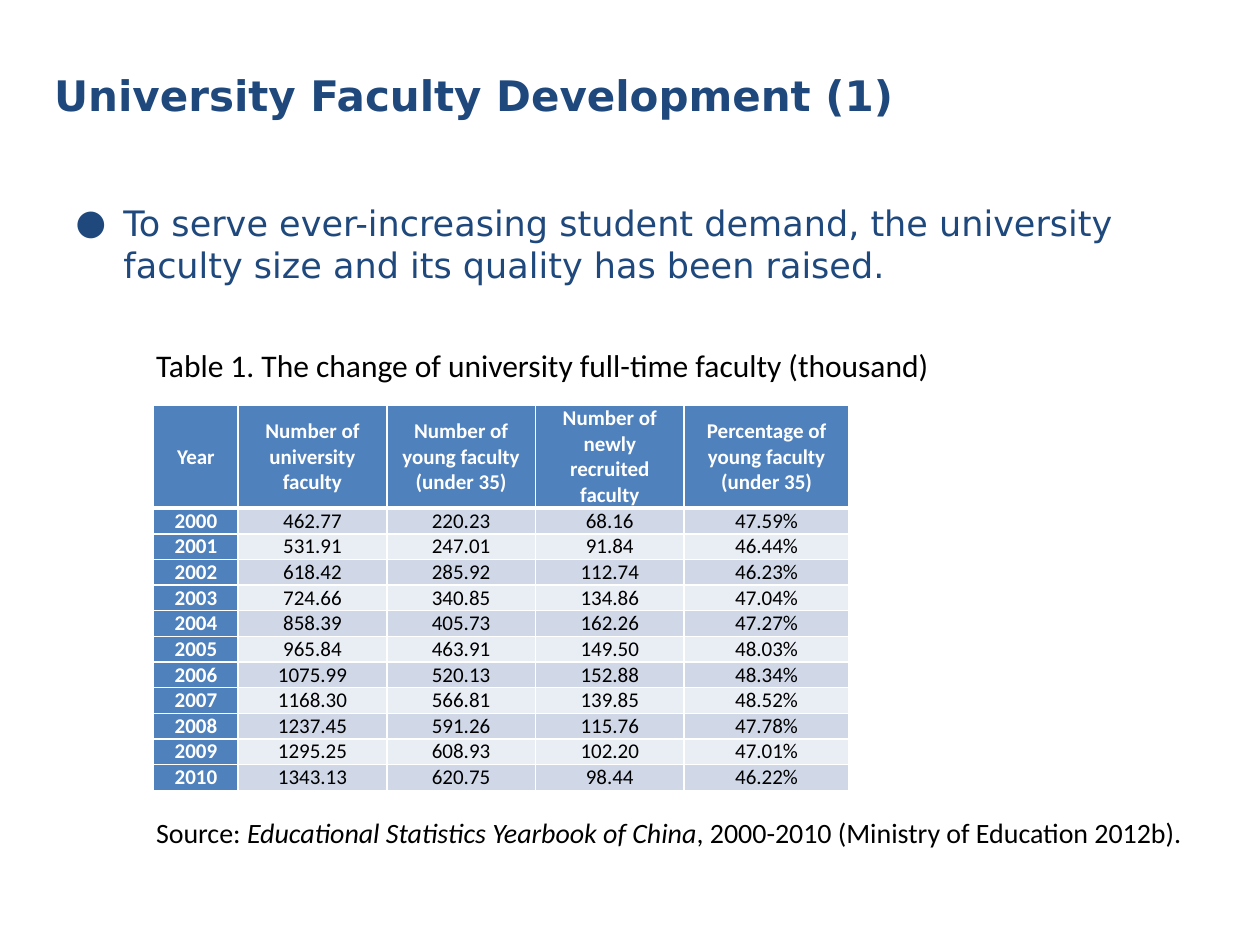
from dataclasses import dataclass

from lxml.etree import SubElement
from pptx import Presentation
from pptx.dml.color import RGBColor
from pptx.enum.text import MSO_ANCHOR, MSO_AUTO_SIZE, PP_ALIGN
from pptx.oxml.ns import qn
from pptx.util import Inches, Pt

HEADS = [
    "Year",
    "Number of university faculty",
    "Number of young faculty (under 35)",
    "Number of newly recruited faculty",
    "Percentage of young faculty (under 35)",
]
ROWS = [
    ("2000", "462.77", "220.23", "68.16", "47.59%"),
    ("2001", "531.91", "247.01", "91.84", "46.44%"),
    ("2002", "618.42", "285.92", "112.74", "46.23%"),
    ("2003", "724.66", "340.85", "134.86", "47.04%"),
    ("2004", "858.39", "405.73", "162.26", "47.27%"),
    ("2005", "965.84", "463.91", "149.50", "48.03%"),
    ("2006", "1075.99", "520.13", "152.88", "48.34%"),
    ("2007", "1168.30", "566.81", "139.85", "48.52%"),
    ("2008", "1237.45", "591.26", "115.76", "47.78%"),
    ("2009", "1295.25", "608.93", "102.20", "47.01%"),
    ("2010", "1343.13", "620.75", "98.44", "46.22%"),
]
WIDTHS = [0.67, 1.18, 1.18, 1.18, 1.31]
RECRUITS = 3


@dataclass(frozen=True)
class Theme:
    navy: str = "1F497D"
    blue: str = "4F81BD"
    bands: tuple = ("D0D8E8", "E9EDF4")
    white: str = "FFFFFF"
    black: str = "000000"
    head: str = "DejaVu Sans"
    text: str = "Calibri"
    title: int = 24
    body: int = 20
    label: int = 18
    source: int = 16
    cell: int = 12


class Deck:
    def __init__(self, theme):
        self.theme = theme
        self.prs = Presentation()
        self.prs.slide_width, self.prs.slide_height = Inches(10), Inches(7.5)
        self.slide = self.prs.slides.add_slide(self.prs.slide_layouts[1])

    def run(self, para, text, size, color, face, bold=False, italic=False):
        run = para.add_run()
        run.text = text
        font = run.font
        font.name, font.size = face, Pt(size)
        font.bold, font.italic = bold, italic
        font.color.rgb = RGBColor.from_string(color)

    def place(self, shape, box):
        shape.left, shape.top, shape.width, shape.height = map(Inches, box)

    def title(self, text, box):
        t, shape = self.theme, self.slide.shapes.title
        self.place(shape, box)
        frame = shape.text_frame
        frame.auto_size = MSO_AUTO_SIZE.NONE
        frame.vertical_anchor = MSO_ANCHOR.MIDDLE
        para = frame.paragraphs[0]
        para.alignment = PP_ALIGN.LEFT
        self.run(para, text, t.title, t.navy, t.head, bold=True)

    def bullet(self, text, box):
        t, shape = self.theme, self.slide.placeholders[1]
        self.place(shape, box)
        frame = shape.text_frame
        frame.auto_size = MSO_AUTO_SIZE.NONE
        para = frame.paragraphs[0]
        props = para._p.get_or_add_pPr()
        props.set("marL", str(Inches(0.38)))
        props.set("indent", str(-Inches(0.38)))
        SubElement(props, qn("a:buFont")).set("typeface", t.head)
        SubElement(props, qn("a:buChar")).set("char", "●")
        self.run(para, text, t.body, t.navy, t.head)

    def note(self, parts, size, box):
        """Add a text box from (text, italic) parts."""
        t = self.theme
        frame = self.slide.shapes.add_textbox(*map(Inches, box)).text_frame
        frame.word_wrap = True
        frame.auto_size = MSO_AUTO_SIZE.SHAPE_TO_FIT_TEXT
        frame.vertical_anchor = MSO_ANCHOR.MIDDLE
        for text, italic in parts:
            self.run(frame.paragraphs[0], text, size, t.black, t.text,
                     italic=italic)

    def border(self, cell, sides):
        """Draw cell edges, given as tag to width in points."""
        props = cell._tc.get_or_add_tcPr()
        for tag, width in sides.items():
            line = SubElement(props, qn(f"a:{tag}"), w=str(Pt(width)))
            fill = SubElement(line, qn("a:solidFill"))
            SubElement(fill, qn("a:srgbClr")).set("val", self.theme.white)

    def cell(self, cell, text, row, col):
        t = self.theme
        strong = row == 0 or col == 0
        self.border(cell, {"lnL": 1, "lnR": 1,
                           "lnT": 3 if row == 1 else 1,
                           "lnB": 3 if row == 0 else 1})
        cell.fill.solid()
        shade = t.blue if strong else t.bands[(row - 1) % 2]
        cell.fill.fore_color.rgb = RGBColor.from_string(shade)
        cell.margin_left = cell.margin_right = Inches(0.08)
        cell.margin_top = cell.margin_bottom = 0
        low = row > 0 and col == RECRUITS
        cell.vertical_anchor = MSO_ANCHOR.BOTTOM if low else MSO_ANCHOR.MIDDLE
        para = cell.text_frame.paragraphs[0]
        para.alignment = PP_ALIGN.CENTER
        self.run(para, text, t.cell, t.white if strong else t.black, t.text,
                 bold=strong)

    def table(self, rows, widths, left, top, first, rest):
        """Add a table whose header is `first` high and other rows `rest`."""
        high = first + rest * (len(rows) - 1)
        box = map(Inches, (left, top, sum(widths), high))
        grid = self.slide.shapes.add_table(len(rows), len(widths), *box).table
        grid.first_col, grid.horz_banding = True, False
        for column, width in zip(grid.columns, widths):
            column.width = Inches(width)
        for r, values in enumerate(rows):
            grid.rows[r].height = Inches(rest if r else first)
            for c, text in enumerate(values):
                self.cell(grid.cell(r, c), text, r, c)

    def save(self):
        self.prs.save("out.pptx")


def main():
    theme = Theme()
    deck = Deck(theme)
    deck.title("University Faculty Development (1)", (0.33, 0.25, 9.33, 1))
    deck.bullet("To serve ever-increasing student demand, the university "
                "faculty size and its quality has been raised.",
                (0.5, 1.55, 9, 5.28))
    deck.table([HEADS, *ROWS], WIDTHS, 1.22, 3.22, 0.81, 0.2)
    deck.note([("Source: ", False),
               ("Educational Statistics Yearbook of China", True),
               (", 2000-2010 (Ministry of Education 2012b).", False)],
              theme.source, (1.14, 6.42, 8.66, 0.37))
    deck.note([("Table 1. The change of university full-time faculty "
                "(thousand)", False)],
              theme.label, (1.14, 2.7, 7.88, 0.4))
    deck.save()


if __name__ == "__main__":
    main()
